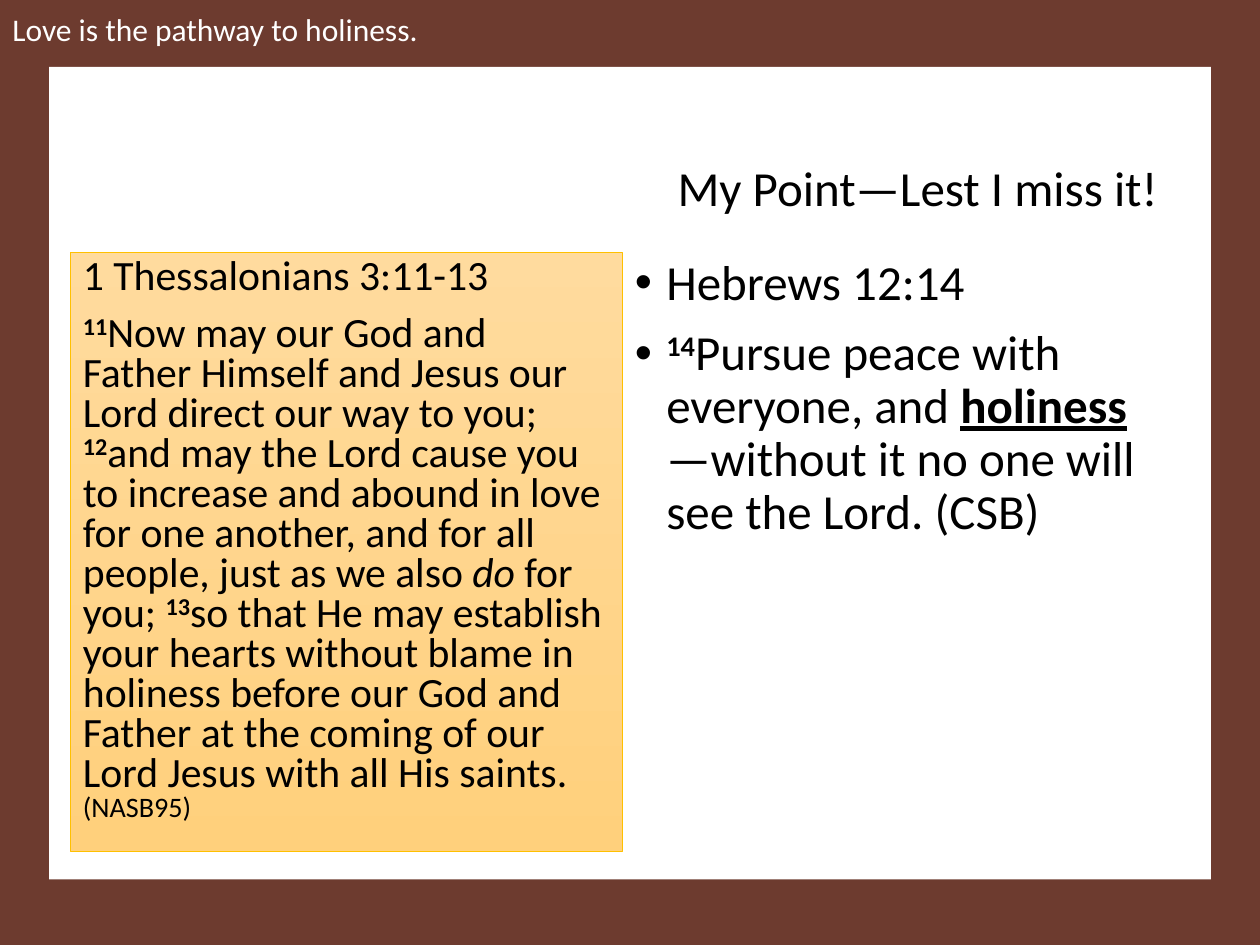
from pptx import Presentation, util as u
from pptx.dml.color import RGBColor
from pptx.enum import shapes, text
from pptx.oxml.ns import qn
from lxml import etree

BROWN = RGBColor(0x6D, 0x3B, 0x2F)
WHITE = RGBColor(0xFF, 0xFF, 0xFF)
BLACK = RGBColor(0, 0, 0)
GOLD = RGBColor(0xFF, 0xC0, 0x00)
PALE_ORANGE = RGBColor(0xFF, 0xDB, 0x9E)
ORANGE = RGBColor(0xFF, 0xD0, 0x7C)
FONT = "Calibri"
NO_BREAK = chr(160)  # written as ~ in the verses

# Each paragraph is a list of (wording, style) runs.
BANNER = [[("Love is the pathway to holiness.", "")]]
HEADING = [[("My Point—Lest I miss it!", "")]]
THESSALONIANS = [
    [("1 Thessalonians 3:11-13", "")],
    [("11", "verse"),
     ("Now may~our God and Father~Himself and Jesus our Lord~direct our way to you; ", ""),
     ("12", "verse"),
     ("and may the Lord cause you to increase and abound in love for one another, "
      "and for all people, just as we also ", ""),
     ("do ", "italic"), ("for you; ", ""),
     ("13", "verse"),
     ("so that He may establish your hearts~without blame in holiness before~our God "
      "and Father at the~coming of our Lord Jesus~with all His saints. ", ""),
     ("(NASB95)", "small")],
]
HEBREWS = [
    [("Hebrews 12:14", "")],
    [("14", "verse"), ("Pursue peace with everyone, and ", ""),
     ("holiness", "stress"), ("—without it no one will see the Lord. (CSB)", "")],
]

WIDTH, HEIGHT = 10, 7.5
MARGIN_X, MARGIN_Y = 0.39, 0.53
COLUMN_LEFT, COLUMN_TOP = 0.56, 2
COLUMN_WIDTH, COLUMN_HEIGHT = 4.38, 4.76


def inches(*lengths):
    return [u.Inches(length) for length in lengths]


def add_panel(page, *place):
    panel = page.shapes.add_shape(shapes.MSO_SHAPE.RECTANGLE, *inches(*place))
    panel.shadow.inherit = False
    panel.line.fill.background()
    return panel


def add_bullet(para):
    properties = para._p.get_or_add_pPr()
    properties.set("marL", str(u.Inches(0.25)))
    properties.set("indent", str(-u.Inches(0.25)))
    etree.SubElement(properties, qn("a:buFont")).set("typeface", "Arial")
    etree.SubElement(properties, qn("a:buChar")).set("char", "•")


def write(box, paragraphs, size, spacing=1.0, color=BLACK, wrap=True, bullets=False):
    frame = box.text_frame
    frame.word_wrap = wrap
    frame.vertical_anchor = text.MSO_ANCHOR.TOP
    for number, runs in enumerate(paragraphs):
        para = frame.add_paragraph() if number else frame.paragraphs[0]
        if bullets:
            add_bullet(para)
        para.alignment = text.PP_ALIGN.LEFT
        para.line_spacing = spacing
        para.space_before = u.Pt(10 if number else 0)
        for wording, style in runs:
            span = para.add_run()
            span.text = wording.replace("~", NO_BREAK)
            font = span.font
            font.name = FONT
            font.size = u.Pt(16.1 if style == "small" else size)
            font.color.rgb = color
            font.bold = style in ("verse", "stress")
            font.italic = style == "italic"
            font.underline = style == "stress"
            if style == "verse":
                span._r.get_or_add_rPr().set("baseline", "30000")


def main():
    deck = Presentation()
    deck.slide_width, deck.slide_height = inches(WIDTH, HEIGHT)
    page = deck.slides.add_slide(deck.slide_layouts[6])

    border = add_panel(page, 0, 0, WIDTH, HEIGHT)
    border.fill.solid()
    border.fill.fore_color.rgb = BROWN
    sheet = add_panel(page, MARGIN_X, MARGIN_Y,
                      WIDTH - 2 * MARGIN_X, HEIGHT - 2 * MARGIN_Y + 0.01)
    sheet.fill.solid()
    sheet.fill.fore_color.rgb = WHITE

    banner = page.shapes.add_textbox(*inches(0, 0.03, 3.46, 0.4))
    write(banner, BANNER, 18, color=WHITE, wrap=False)

    passage = add_panel(page, COLUMN_LEFT, COLUMN_TOP, COLUMN_WIDTH, COLUMN_HEIGHT)
    passage.fill.gradient()
    passage.fill.gradient_angle = 270
    for stop, color in zip(passage.fill.gradient_stops, (PALE_ORANGE, ORANGE)):
        stop.color.rgb = color
    passage.line.color.rgb = GOLD
    passage.line.width = u.Pt(0.5)
    write(passage, THESSALONIANS, 23.8, spacing=0.8)

    point = page.shapes.add_textbox(*inches(
        COLUMN_LEFT + COLUMN_WIDTH, COLUMN_TOP, COLUMN_WIDTH, COLUMN_HEIGHT))
    write(point, HEBREWS, 28, spacing=0.9, bullets=True)

    heading = page.shapes.add_textbox(*inches(5.28, 1.25, COLUMN_WIDTH, 0.57))
    write(heading, HEADING, 28, spacing=0.9)

    deck.save("out.pptx")


if __name__ == "__main__":
    main()
